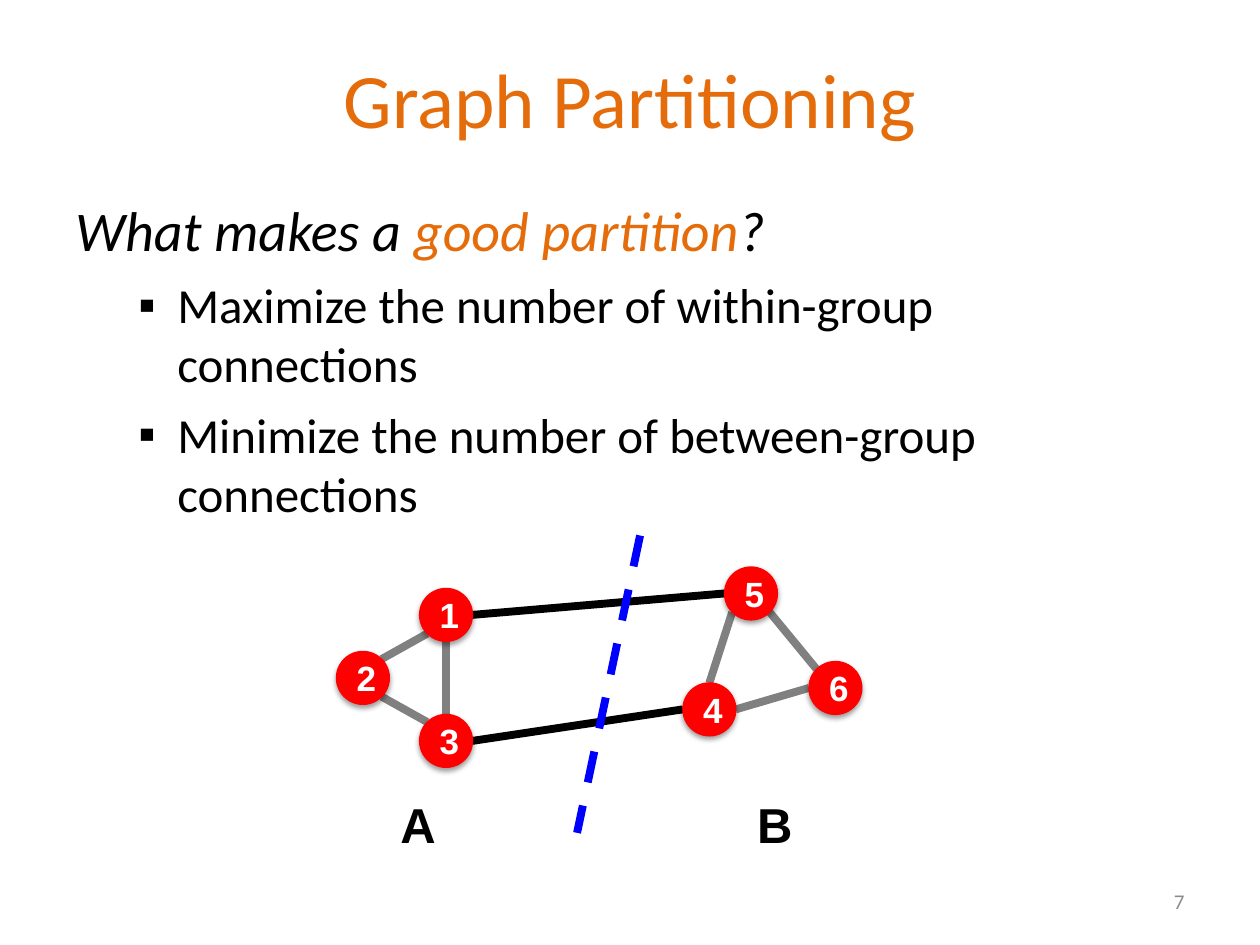
"""Build a slide on graph partitioning with a six-node graph cut in two."""
from lxml import etree
from pptx import Presentation
from pptx.dml.color import RGBColor
from pptx.enum.dml import MSO_LINE
from pptx.enum.shapes import MSO_CONNECTOR, MSO_SHAPE
from pptx.enum.text import MSO_ANCHOR, PP_ALIGN
from pptx.oxml.ns import qn
from pptx.util import Inches, Pt

STRAIGHT = MSO_CONNECTOR.STRAIGHT
OVAL = MSO_SHAPE.OVAL
DASH = MSO_LINE.DASH
MIDDLE, TOP = MSO_ANCHOR.MIDDLE, MSO_ANCHOR.TOP
LEFT, CENTER, RIGHT = PP_ALIGN.LEFT, PP_ALIGN.CENTER, PP_ALIGN.RIGHT
HUES = {
    "orange": "E46C0A", "black": "000000", "white": "FFFFFF", "red": "FF0000",
    "gray": "808080", "pale": "8C8C8C", "blue": "0000FF",
}
SIZE = 0.42
HALF = SIZE / 2
SLANT = HALF * 0.71

deck = Presentation()
deck.slide_width, deck.slide_height = Inches(10), Inches(7.5)
slide = deck.slides.add_slide(deck.slide_layouts[6])
shapes = slide.shapes


def write(frame, text, size=28, hue="black", font="Calibri", bold=False,
          italic=False, align=LEFT, anchor=TOP, wrap=True, para=None):
    frame.word_wrap = wrap
    frame.vertical_anchor = anchor
    para = para or frame.paragraphs[0]
    para.alignment = align
    for i, part in enumerate(text.split("\n")):
        if i:
            para.add_line_break()
        run = para.add_run()
        run.text = part
        run.font.size, run.font.name = Pt(size), font
        run.font.bold, run.font.italic = bold, italic
        run.font.color.rgb = RGBColor.from_string(HUES[hue])


def join(start, end, hue):
    line = shapes.add_connector(STRAIGHT, *map(Inches, start + end))
    line.line.width = Pt(4.5)
    line.line.color.rgb = RGBColor.from_string(HUES[hue])
    etree.SubElement(line._element.spPr, qn("a:effectLst"))
    return line


texts = [
    ((0.5, 0.15, 9, 1.25), "Graph Partitioning",
     dict(size=44, hue="orange", align=CENTER, anchor=MIDDLE)),
    ((7.17, 6.95, 2.33, 0.4), "7",
     dict(size=12, hue="pale", align=RIGHT, anchor=MIDDLE)),
    ((3.08, 6.26, 0.49, 0.57), "A", dict(font="Arial", bold=True, wrap=False)),
    ((5.91, 6.26, 0.49, 0.57), "B", dict(font="Arial", bold=True, wrap=False)),
]
for area, text, style in texts:
    write(shapes.add_textbox(*map(Inches, area)).text_frame, text, **style)

body = shapes.add_textbox(*map(Inches, (0.5, 1.5, 9, 4.95))).text_frame
for text, hue in [("What makes a ", "black"), ("good partition", "orange"),
                  ("?", "black")]:
    write(body, text, size=32, hue=hue, italic=True)
for text in ["Maximize the number of within-group \nconnections",
             "Minimize the number of between-group connections"]:
    para = body.add_paragraph()
    para.space_before = Pt(7)
    write(body, text, para=para)
    props = para._p.get_or_add_pPr()
    props.set("marL", str(Inches(0.81)))
    props.set("indent", str(Inches(-0.31)))
    etree.SubElement(props, qn("a:buFont"), typeface="Arial")
    etree.SubElement(props, qn("a:buChar"), char="▪")

nodes = {
    "1": (3.54, 4.88), "3": (3.54, 5.88), "2": (2.88, 5.38),
    "5": (5.96, 4.71), "4": (5.63, 5.63), "6": (6.63, 5.46),
}
sides = {
    "n": (0, -HALF), "s": (0, HALF), "w": (-HALF, 0), "e": (HALF, 0),
    "nw": (-SLANT, -SLANT), "ne": (SLANT, -SLANT),
    "sw": (-SLANT, SLANT), "se": (SLANT, SLANT),
}
edges = [
    ("1", "sw", "2", "ne", "gray"), ("2", "se", "3", "nw", "gray"),
    ("1", "s", "3", "n", "gray"), ("1", "e", "5", "w", "black"),
    ("3", "e", "4", "w", "black"), ("5", "se", "6", "nw", "gray"),
    ("4", "e", "6", "w", "gray"), ("5", "sw", "4", "n", "gray"),
]
for a, out, b, into, hue in edges:
    start, end = (
        tuple(c + d for c, d in zip(nodes[name], sides[side]))
        for name, side in ((a, out), (b, into)))
    join(start, end, hue)

for name, (x, y) in nodes.items():
    dot = shapes.add_shape(
        OVAL, *map(Inches, (x - HALF, y - HALF, SIZE, SIZE)))
    dot.fill.solid()
    dot.fill.fore_color.rgb = RGBColor.from_string(HUES["red"])
    dot.line.color.rgb = RGBColor.from_string(HUES["red"])
    dot.line.width = Pt(0.75)
    dot.shadow.inherit = False
    glow = etree.SubElement(
        dot._element.spPr.find(qn("a:effectLst")), qn("a:outerShdw"),
        blurRad=str(Pt(3.1)), dist=str(Pt(1.6)), dir="5400000", rotWithShape="0")
    tint = etree.SubElement(glow, qn("a:srgbClr"), val=HUES["black"])
    etree.SubElement(tint, qn("a:alpha"), val="38000")
    write(dot.text_frame, name, size=20, hue="white", font="Arial", bold=True,
          align=CENTER, anchor=MIDDLE)

cut = join((5.08, 4.25), (4.58, 6.61), "blue")
cut.line.dash_style = DASH

deck.save("out.pptx")
